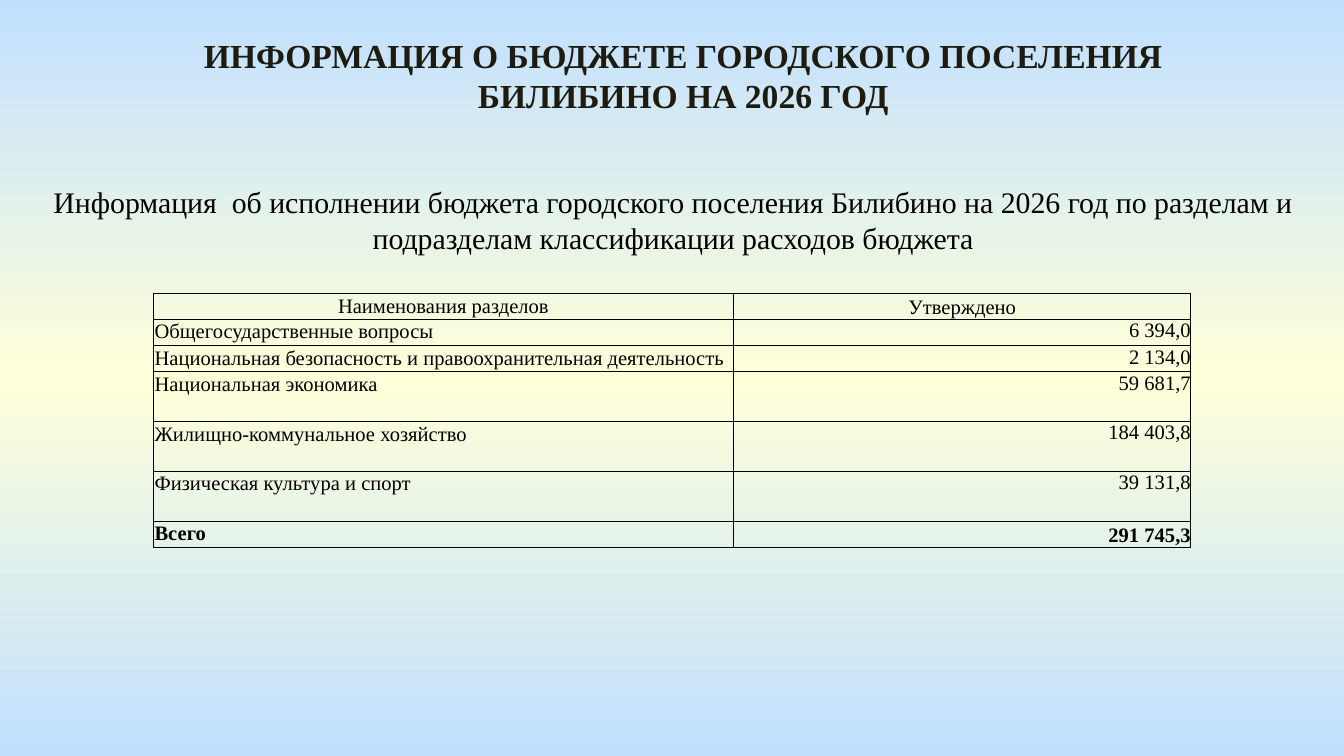
"""Build the slide with the 2026 town budget by expenditure section."""
from copy import deepcopy

from pptx import Presentation
from pptx.dml.color import RGBColor
from pptx.enum.text import MSO_ANCHOR, MSO_AUTO_SIZE, PP_ALIGN
from pptx.oxml import parse_xml
from pptx.util import Inches, Pt

LEFT, CENTER, RIGHT = PP_ALIGN.LEFT, PP_ALIGN.CENTER, PP_ALIGN.RIGHT
TOP, MIDDLE, BOTTOM = MSO_ANCHOR.TOP, MSO_ANCHOR.MIDDLE, MSO_ANCHOR.BOTTOM
FIT_SHAPE = MSO_AUTO_SIZE.SHAPE_TO_FIT_TEXT
NS = "http://schemas.openxmlformats.org/drawingml/2006/main"
BORDER = (
    '<a:{0} xmlns:a="' + NS + '" w="6350"><a:solidFill><a:srgbClr val="000000"/>'
    '</a:solidFill></a:{0}>'
)


def rgb(value):
    return RGBColor.from_string(value)


def write(tf, text, size, align, color="000000", bold=False):
    p = tf.paragraphs[0]
    p.alignment = align
    r = p.add_run()
    r.text = text
    r.font.name = "Times New Roman"
    r.font.size = Pt(size)
    r.font.bold = bold
    r.font.color.rgb = rgb(color)


prs = Presentation()
prs.slide_width = Inches(10)
prs.slide_height = prs.slide_width * 9 // 16
s = prs.slides.add_slide(prs.slide_layouts[5])

fill = s.background.fill
fill.gradient()
fill.gradient_angle = 270
for stop in fill.gradient_stops:
    stop.color.rgb = rgb("C1E0FF")
first = s.background._cSld.xpath(".//a:gs")[0]
first.addnext(deepcopy(first))
middle = fill.gradient_stops[1]
middle.position = 0.5
middle.color.rgb = rgb("FFFFD9")

title = s.shapes.title
title.left, title.top = Inches(1.22), Inches(0.21)
title.width, title.height = Inches(7.73), Inches(0.71)
tf = title.text_frame
tf.word_wrap = True
tf.auto_size = FIT_SHAPE
tf.vertical_anchor = TOP
write(tf, "ИНФОРМАЦИЯ О БЮДЖЕТЕ ГОРОДСКОГО ПОСЕЛЕНИЯ БИЛИБИНО НА 2026 ГОД",
      18, CENTER, "1E1C11", True)

sp = s.shapes.add_textbox(Inches(0.01), Inches(1.32), Inches(10), Inches(0.64))
tf = sp.text_frame
tf.word_wrap = True
tf.auto_size = FIT_SHAPE
write(tf, "Информация  об исполнении бюджета городского поселения Билибино на 2026 год "
      "по разделам и подразделам классификации расходов бюджета", 16, CENTER)

rows = [
    ("Наименования разделов", "Утверждено", 0.19),
    ("Общегосударственные вопросы", "6 394,0", 0.2),
    ("Национальная безопасность и правоохранительная деятельность", "2 134,0", 0.19),
    ("Национальная экономика", "59 681,7", 0.37),
    ("Жилищно-коммунальное хозяйство", "184 403,8", 0.37),
    ("Физическая культура и спорт", "39 131,8", 0.37),
    ("Всего", "291 745,3", 0.19),
]
last = len(rows) - 1
table = s.shapes.add_table(len(rows), 2, Inches(1.14), Inches(2.18),
                           Inches(7.72), Inches(1.9)).table
table.first_row = table.horz_banding = False
for column, width in zip(table.columns, (4.32, 3.4)):
    column.width = Inches(width)

for i, (name, amount, height) in enumerate(rows):
    table.rows[i].height = Inches(height)
    for j, text in enumerate((name, amount)):
        cell = table.cell(i, j)
        inset = Inches(0.01 if i == 0 or j == 0 else 0)
        cell.margin_left = cell.margin_right = cell.margin_top = inset
        cell.margin_bottom = 0
        if j == 1 and i in (0, last):
            cell.vertical_anchor = BOTTOM
        else:
            cell.vertical_anchor = MIDDLE if i == 0 else TOP
        align = CENTER if i == 0 else (LEFT, RIGHT)[j]
        write(cell.text_frame, text, 11, align, bold=i == last)
        cell.fill.background()
        tc_pr = cell._tc.get_or_add_tcPr()
        for k, side in enumerate(("lnL", "lnR", "lnT", "lnB")):
            tc_pr.insert(k, parse_xml(BORDER.format(side)))

prs.save("out.pptx")
